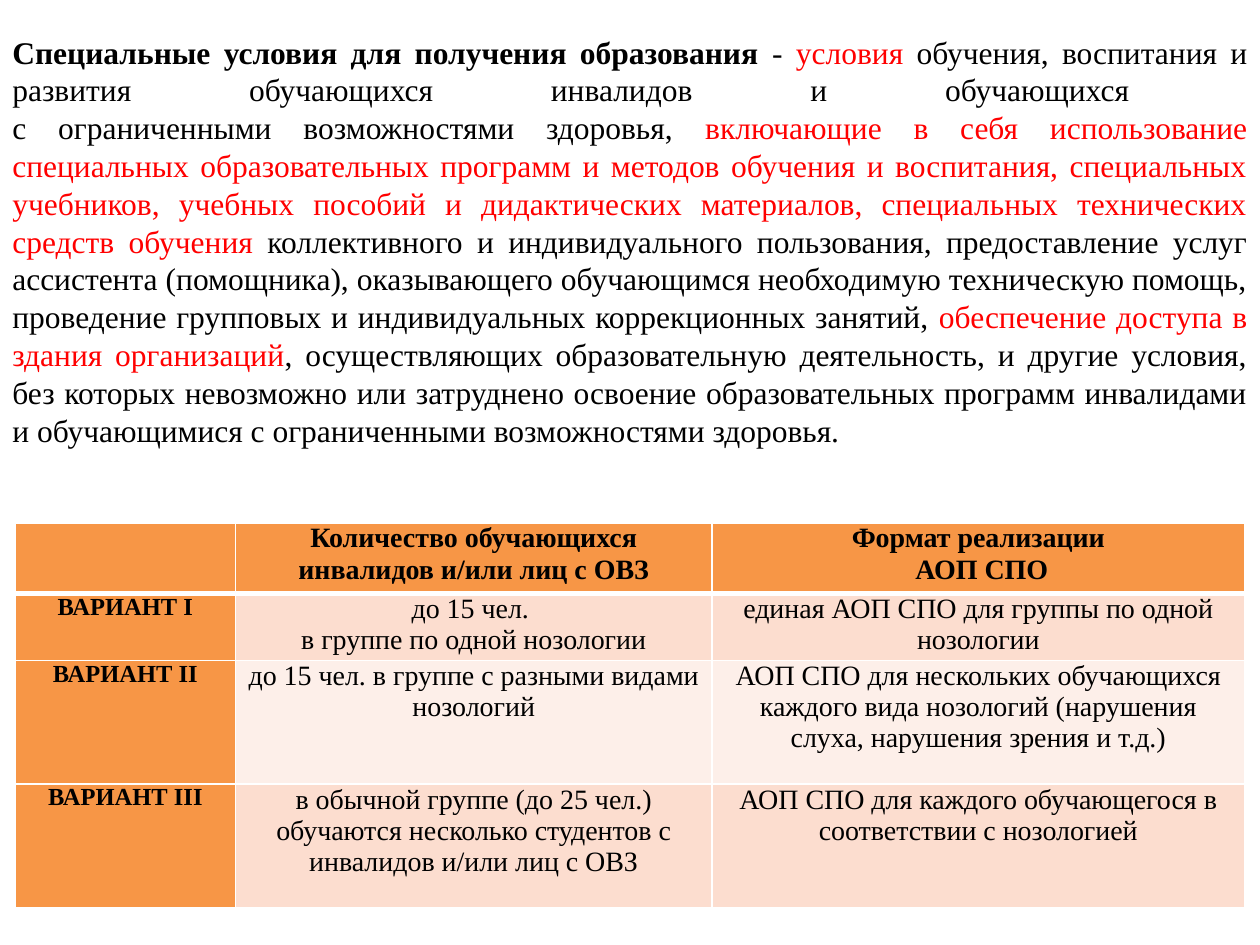
"""Build the slide on special conditions for education and the programme variants."""
from typing import NamedTuple

from lxml.etree import SubElement
from pptx import Presentation
from pptx.dml.color import RGBColor
from pptx.enum.text import PP_ALIGN
from pptx.oxml.ns import qn
from pptx.util import Inches, Pt

BLACK, RED, WHITE = "000000", "FF0000", "FFFFFF"
ORANGE, PEACH, PALE = "F79646", "FCDDCF", "FDEFE9"
COLUMN_WIDTHS = (1.75, 3.78, 4.23)
INSETS = {"margin_left": 0.07, "margin_right": 0.07, "margin_top": 0, "margin_bottom": 0}


class Phrase(NamedTuple):
    text: str
    color: str = BLACK
    bold: bool = False
    breaks_line: bool = False


class Row(NamedTuple):
    height: float
    fill: str
    texts: tuple[str, str, str]


DEFINITION = (
    Phrase("Специальные условия для получения образования ", bold=True),
    Phrase("- "),
    Phrase("условия", RED),
    Phrase(" обучения, воспитания и развития обучающихся инвалидов и обучающихся ", breaks_line=True),
    Phrase("с ограниченными возможностями здоровья, "),
    Phrase("включающие в себя использование специальных образовательных программ и методов "
           "обучения и воспитания, специальных учебников, учебных пособий и дидактических "
           "материалов, специальных технических средств обучения ", RED),
    Phrase("коллективного и индивидуального пользования, предоставление услуг ассистента "
           "(помощника), оказывающего обучающимся необходимую техническую помощь, проведение "
           "групповых и индивидуальных коррекционных занятий, "),
    Phrase("обеспечение доступа в здания организаций", RED),
    Phrase(", осуществляющих образовательную деятельность, и другие условия, без которых "
           "невозможно или затруднено освоение образовательных программ инвалидами и "
           "обучающимися с ограниченными возможностями здоровья."),
)

VARIANTS = (
    Row(0.56, ORANGE, ("", "Количество обучающихся инвалидов и/или лиц с ОВЗ",
                       "Формат реализации\n АОП СПО")),
    Row(0.49, PEACH, ("ВАРИАНТ I", "до 15 чел. \nв группе по одной нозологии",
                      "единая АОП СПО для группы по одной нозологии")),
    Row(0.98, PALE, ("ВАРИАНТ II", "до 15 чел. в группе с разными видами нозологий",
                     "АОП СПО для нескольких обучающихся каждого вида нозологий "
                     "(нарушения слуха, нарушения зрения и т.д.)")),
    Row(0.98, PEACH, ("ВАРИАНТ III", "в обычной группе (до 25 чел.) обучаются несколько "
                      "студентов с инвалидов и/или лиц с ОВЗ",
                      "АОП СПО для каждого обучающегося в соответствии с нозологией")),
)


def rgb(color: str) -> RGBColor:
    """Turn a hex string into a colour."""
    return RGBColor.from_string(color)


def format_font(font, size: int, color: str, bold: bool) -> None:
    """Apply the common typeface with the given look."""
    for attribute, value in {"name": "Times New Roman", "size": Pt(size), "bold": bold}.items():
        setattr(font, attribute, value)
    font.color.rgb = rgb(color)


def add_definition(slide) -> None:
    """Write the justified definition at the top."""
    box = slide.shapes.add_textbox(Inches(0), Inches(0.21), Inches(10), Inches(3.39))
    box.text_frame.word_wrap = True
    paragraph = box.text_frame.paragraphs[0]
    paragraph.alignment = PP_ALIGN.JUSTIFY
    for phrase in DEFINITION:
        run = paragraph.add_run()
        run.text = phrase.text
        format_font(run.font, 18, phrase.color, phrase.bold)
        if phrase.breaks_line:
            paragraph.add_line_break()


def add_borders(cell, bottom: int) -> None:
    """Draw white cell borders with the given bottom width."""
    properties = cell._tc.get_or_add_tcPr()
    for side, width in {"lnL": 1, "lnR": 1, "lnT": 1, "lnB": bottom}.items():
        border = SubElement(properties, qn(f"a:{side}"), w=str(Pt(width)))
        SubElement(SubElement(border, qn("a:solidFill")), qn("a:srgbClr"), val=WHITE)


def fill_cell(cell, text: str, fill: str, size: int, bold: bool) -> None:
    """Set the fill, insets and centred text of a cell."""
    cell.fill.solid()
    cell.fill.fore_color.rgb = rgb(fill)
    for margin, inset in INSETS.items():
        setattr(cell, margin, Inches(inset))
    cell.text = text
    for paragraph in cell.text_frame.paragraphs:
        paragraph.alignment = PP_ALIGN.CENTER
        for run in paragraph.runs:
            format_font(run.font, size, BLACK, bold)


def add_variants(slide) -> None:
    """Build the table of programme variants."""
    frame = slide.shapes.add_table(
        len(VARIANTS), len(COLUMN_WIDTHS), Inches(0.12), Inches(4.15),
        Inches(sum(COLUMN_WIDTHS)), Inches(sum(row.height for row in VARIANTS)))
    table = frame.table
    for column, width in zip(table.columns, COLUMN_WIDTHS):
        column.width = Inches(width)
    for row_index, row in enumerate(VARIANTS):
        table.rows[row_index].height = Inches(row.height)
        is_header = row_index == 0
        for column_index, text in enumerate(row.texts):
            is_label = column_index == 0
            cell = table.cell(row_index, column_index)
            add_borders(cell, bottom=3 if is_header else 1)
            fill_cell(cell, text, ORANGE if is_label else row.fill,
                      14 if is_label else 16, is_header or is_label)


def main() -> None:
    """Create and save the presentation."""
    presentation = Presentation()
    presentation.slide_width, presentation.slide_height = Inches(10), Inches(7.5)
    slide = presentation.slides.add_slide(presentation.slide_layouts[6])
    add_definition(slide)
    add_variants(slide)
    presentation.save("out.pptx")


if __name__ == "__main__":
    main()
